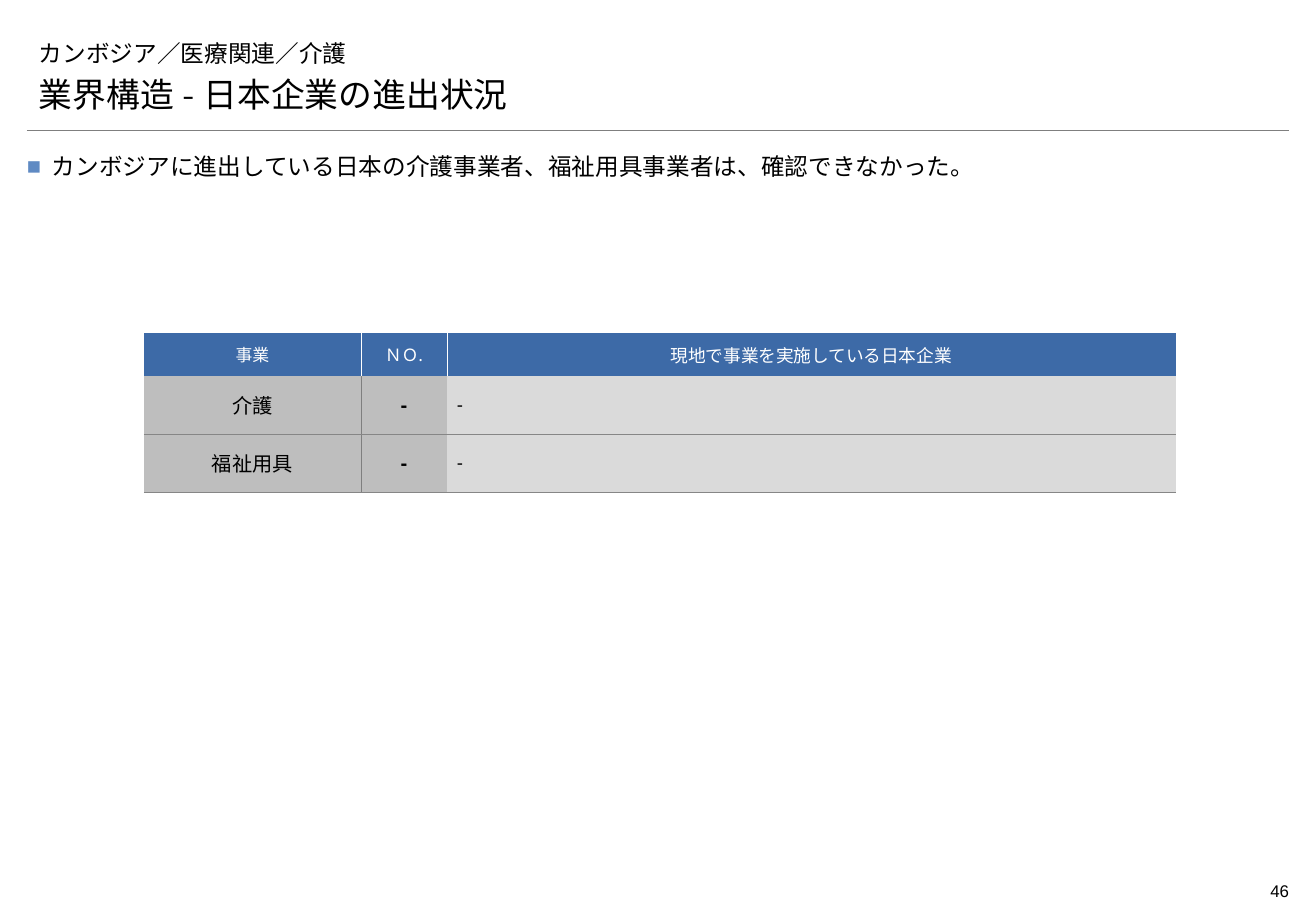
"""Builds the slide on Japanese care companies operating in Cambodia."""
from lxml.etree import SubElement
from pptx import Presentation
from pptx.dml.color import RGBColor
from pptx.enum.shapes import MSO_CONNECTOR as Connector
from pptx.enum.text import MSO_ANCHOR as Anchor, PP_ALIGN as Align
from pptx.oxml.ns import qn
from pptx.util import Pt

EMU_PER_PX = 7526
LATIN, HEADING, JAPANESE = "Arial", "Montserrat", "Noto Sans CJK JP"
BLACK = RGBColor(0x00, 0x00, 0x00)
WHITE = RGBColor(0xFF, 0xFF, 0xFF)
HEADER_BLUE = RGBColor(0x3D, 0x6A, 0xA7)
BULLET_BLUE = RGBColor(0x5F, 0x8A, 0xC3)
LABEL_GREY = RGBColor(0xBE, 0xBE, 0xBE)
ENTRY_GREY = RGBColor(0xDA, 0xDA, 0xDA)
RULE_GREY = RGBColor(0x7F, 0x7F, 0x7F)
ROW_GREY = RGBColor(0x86, 0x86, 0x86)

COLUMNS = (217, 86, 729)
ROWS = (43, 58, 58)
ENTRIES = (
    ("事業", "ＮＯ.", "現地で事業を実施している日本企業"),
    ("介護", "-", "‐"),
    ("福祉用具", "-", "‐"),
)
HEADER_STYLES = ((10, JAPANESE, False), (10, JAPANESE, False), (10.5, JAPANESE, False))
BODY_STYLES = ((12, JAPANESE, False), (12, LATIN, True), (11, LATIN, False))


def px(length):
    return length * EMU_PER_PX


def style_runs(paragraph, size, face, color=BLACK, bold=False):
    for run in paragraph.runs:
        run.font.size = Pt(size)
        run.font.name = face
        run.font.bold = bold
        run.font.color.rgb = color
        SubElement(run.font._element, qn("a:ea"), typeface=JAPANESE)


def set_margins(target, side, vertical):
    target.margin_left = target.margin_right = px(side)
    target.margin_top = target.margin_bottom = px(vertical)


def add_text(slide, box, text, size, face, side=0, vertical=0, anchor=Anchor.TOP):
    frame = slide.shapes.add_textbox(*map(px, box)).text_frame
    frame.word_wrap = True
    frame.vertical_anchor = anchor
    set_margins(frame, side, vertical)
    frame.text = text
    paragraph = frame.paragraphs[0]
    style_runs(paragraph, size, face)
    return paragraph


def add_bullet(paragraph, mark, color, indent):
    properties = paragraph._p.get_or_add_pPr()
    properties.set("marL", str(px(indent)))
    properties.set("indent", str(-px(indent)))
    SubElement(SubElement(properties, qn("a:buClr")), qn("a:srgbClr"), val=str(color))
    SubElement(properties, qn("a:buFont"), typeface=LATIN)
    SubElement(properties, qn("a:buChar"), char=mark)
    paragraph.line_spacing = 1.1
    paragraph.space_after = Pt(2)
    paragraph.alignment = Align.JUSTIFY


def add_rule(slide, left, right, y):
    rule = slide.shapes.add_connector(Connector.STRAIGHT, px(left), px(y), px(right), px(y))
    rule.line.color.rgb = RULE_GREY
    rule.line.width = Pt(0.25)
    SubElement(rule._element.spPr, qn("a:effectLst"))


def set_borders(cell, borders):
    properties = cell._tc.get_or_add_tcPr()
    for side in "LRTB":
        color = borders.get(side)
        edge = SubElement(properties, qn(f"a:ln{side}"), w=str(Pt(0.5)))
        if color is None:
            SubElement(edge, qn("a:noFill"))
        else:
            SubElement(SubElement(edge, qn("a:solidFill")), qn("a:srgbClr"), val=str(color))


def borders_at(row, column):
    if row == 0:
        dividers = (WHITE, WHITE)
    else:
        dividers = (RULE_GREY, None)
    edges = (None, *dividers, None)
    return {
        "L": edges[column],
        "R": edges[column + 1],
        "T": ROW_GREY if row > 1 else None,
        "B": ROW_GREY if row else None,
    }


def fill_cell(cell, row, column):
    is_header = row == 0
    size, face, bold = (HEADER_STYLES if is_header else BODY_STYLES)[column]
    is_entry = not is_header and column == 2
    set_borders(cell, borders_at(row, column))
    cell.fill.solid()
    cell.fill.fore_color.rgb = (
        HEADER_BLUE if is_header else ENTRY_GREY if is_entry else LABEL_GREY
    )
    cell.vertical_anchor = Anchor.MIDDLE
    set_margins(cell, 0 if is_header and column < 2 else 10, 5)
    cell.text_frame.text = ENTRIES[row][column]
    paragraph = cell.text_frame.paragraphs[0]
    paragraph.alignment = Align.LEFT if is_entry else Align.CENTER
    style_runs(paragraph, size, face, WHITE if is_header else BLACK, bold)


def add_company_table(slide, left, top):
    table = slide.shapes.add_table(
        len(ROWS), len(COLUMNS), px(left), px(top), px(sum(COLUMNS)), px(sum(ROWS))
    ).table
    table.horz_banding = False
    for column, width in enumerate(COLUMNS):
        table.columns[column].width = px(width)
    for row, height in enumerate(ROWS):
        table.rows[row].height = px(height)
        for column in range(len(COLUMNS)):
            fill_cell(table.cell(row, column), row, column)


def main():
    deck = Presentation()
    deck.slide_width, deck.slide_height = px(1316), px(911)
    slide = deck.slides.add_slide(deck.slide_layouts[6])
    add_rule(slide, 27, 1289, 130)
    page_number = add_text(slide, (1194, 875, 95, 33), "46", 10, LATIN, vertical=6)
    page_number.alignment = Align.RIGHT
    headings = (("カンボジア／医療関連／介護", 14, 26), ("業界構造 - 日本企業の進出状況", 20, 73))
    for text, size, top in headings:
        add_text(slide, (27, top, 1262, 47), text, size, HEADING, 12, 6, Anchor.BOTTOM)
    finding = add_text(
        slide, (27, 149, 1262, 29),
        "カンボジアに進出している日本の介護事業者、福祉用具事業者は、確認できなかった。",
        14, LATIN,
    )
    add_bullet(finding, "■", BULLET_BLUE, 25)
    add_company_table(slide, 144, 333)
    deck.save("out.pptx")


if __name__ == "__main__":
    main()
